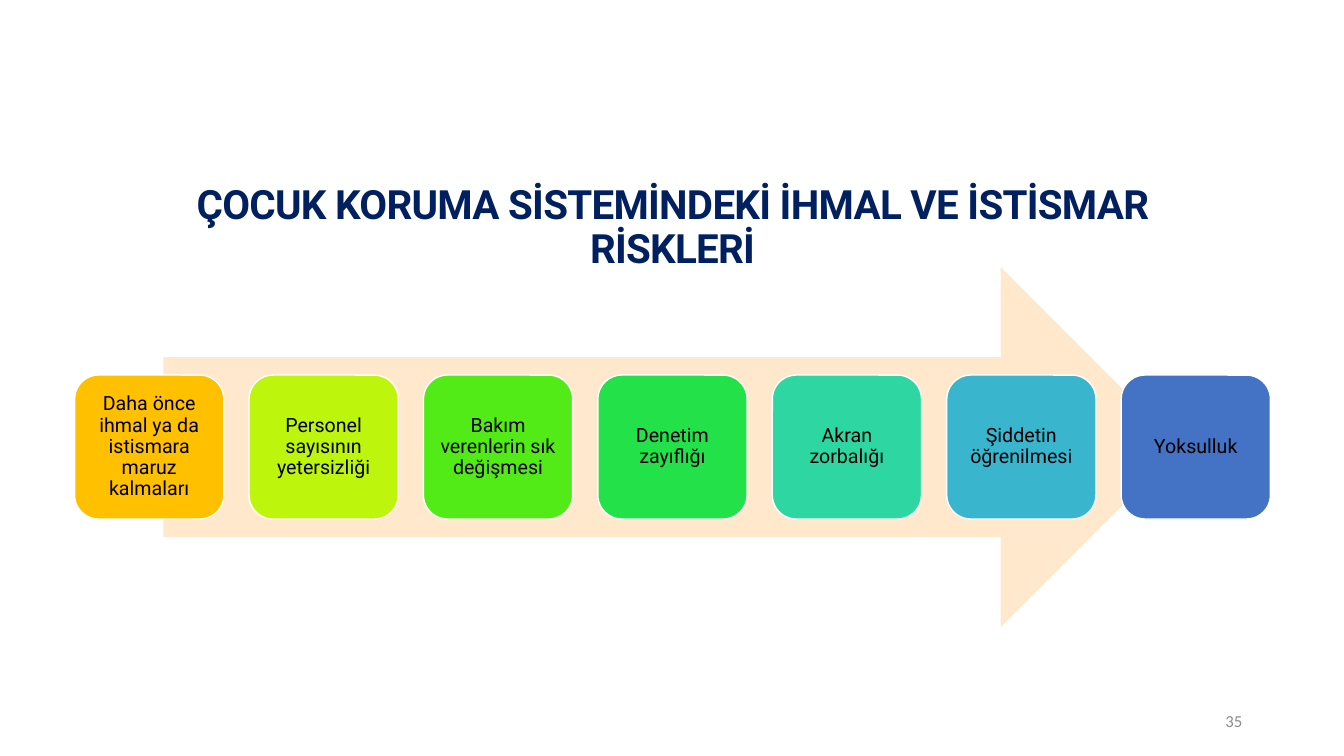
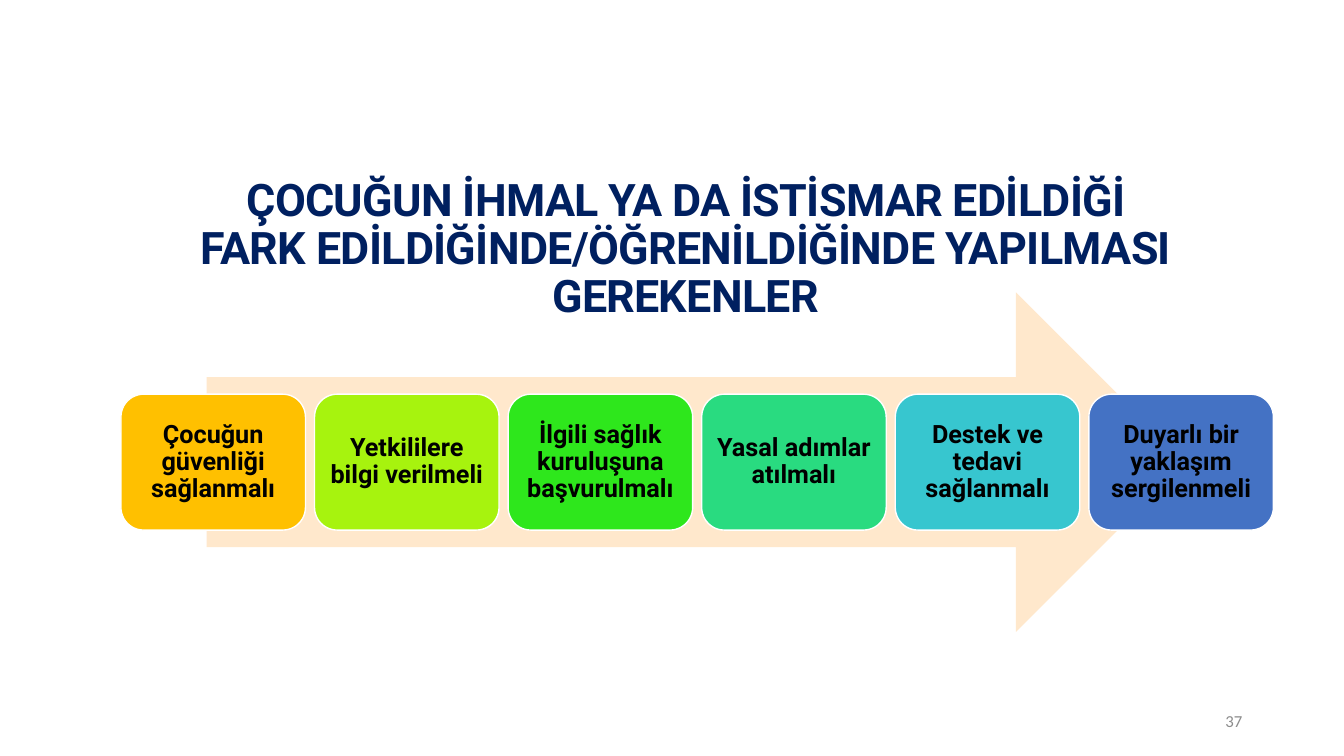
from pptx import Presentation
from pptx.dml.color import RGBColor
from pptx.enum.shapes import MSO_SHAPE
from pptx.enum.text import MSO_ANCHOR, MSO_AUTO_SIZE, PP_ALIGN
from pptx.util import Inches, Pt

NAVY, PEACH, GREY = "002060", "FFE8CC", "8C8C8C"
WHITE, BLACK = "FFFFFF", "000000"
FONT = "Roboto"

SLIDES = [
    dict(
        title="ÇOCUK KORUMA SİSTEMİNDEKİ İHMAL VE İSTİSMAR RİSKLERİ",
        box=(1.67, 1.75, 10, 1.46), size=28.8, base=0.48, page="35",
        arrow=(1.62, 2.65, 10.09, 3.57),
        left=0.74, width=1.48, step=1.73, inset=0.06,
        text=dict(size=Pt(14), bold=False),
        cards=[
            ("Daha önce ihmal ya da istismara maruz kalmaları", "FFC000"),
            ("Personel sayısının yetersizliği", "BEF50C"),
            ("Bakım verenlerin sık değişmesi", "53EB17"),
            ("Denetim zayıflığı", "23E148"),
            ("Akran zorbalığı", "2ED7A1"),
            ("Şiddetin öğrenilmesi", "39B6CE"),
            ("Yoksulluk", "4472C4"),
        ],
    ),
    dict(
        title="ÇOCUĞUN İHMAL YA DA İSTİSMAR EDİLDİĞİ FARK "
              "EDİLDİĞİNDE/ÖĞRENİLDİĞİNDE YAPILMASI GEREKENLER",
        box=(1.8, 1.48, 10, 2), size=32, base=0.05, page="37",
        arrow=(2.05, 2.9, 9.71, 3.37),
        left=1.2, width=1.83, step=1.92, inset=0.07,
        text=dict(size=Pt(18), bold=True),
        cards=[
            ("Çocuğun güvenliği sağlanmalı", "FFC000"),
            ("Yetkililere bilgi verilmeli", "A7F30E"),
            ("İlgili sağlık kuruluşuna başvurulmalı", "2EE71C"),
            ("Yasal adımlar atılmalı", "29DB80"),
            ("Destek ve tedavi sağlanmalı", "37C6CF"),
            ("Duyarlı bir yaklaşım sergilenmeli", "4472C4"),
        ],
    ),
]


def color(code):
    return RGBColor.from_string(code)


def assign(item, values):
    for name, value in values.items():
        setattr(item, name, value)


def write(shape, text, tint, font, margins, align=PP_ALIGN.CENTER, spacing=0.9):
    frame = shape.text_frame
    left, top, right, bottom = map(Inches, margins)
    assign(frame, dict(
        word_wrap=True, auto_size=MSO_AUTO_SIZE.NONE,
        vertical_anchor=MSO_ANCHOR.MIDDLE,
        margin_left=left, margin_top=top, margin_right=right, margin_bottom=bottom))
    line = frame.paragraphs[0]
    assign(line, dict(alignment=align, line_spacing=spacing))
    run = line.add_run()
    run.text = text
    assign(run.font, dict(name=FONT) | font)
    run.font.color.rgb = color(tint)
    return run


def draw(slide, kind, place, fill):
    shape = slide.shapes.add_shape(kind, *map(Inches, place))
    shape.shadow.inherit = False
    shape.fill.solid()
    shape.fill.fore_color.rgb = color(fill)
    shape.line.fill.background()
    return shape


def add_title(slide, data):
    title = slide.shapes.title
    assign(title, dict(zip(("left", "top", "width", "height"), map(Inches, data["box"]))))
    run = write(title, data["title"], NAVY, dict(size=Pt(data["size"]), bold=True),
                (0.1, 0.05, 0.1, data["base"]))
    run.font._element.set("spc", "-50")


def add_flow(slide, data):
    draw(slide, MSO_SHAPE.RIGHT_ARROW, data["arrow"], PEACH)
    top, height = data["arrow"][1], data["arrow"][3]
    for i, (text, fill) in enumerate(data["cards"]):
        place = (data["left"] + i * data["step"], top + 0.3 * height,
                 data["width"], 0.4 * height)
        card = draw(slide, MSO_SHAPE.ROUNDED_RECTANGLE, place, fill)
        card.line.color.rgb = color(WHITE)
        card.line.width = Pt(1)
        write(card, text, BLACK, data["text"], [data["inset"]] * 4)


def add_page(slide, page):
    box = slide.shapes.add_textbox(*map(Inches, (9.42, 6.95, 3, 0.4)))
    write(box, page, GREY, dict(name="Calibri", size=Pt(12)),
          (0.1, 0.05, 0.1, 0.05), PP_ALIGN.RIGHT, 1.0)


def main():
    deck = Presentation()
    deck.slide_width, deck.slide_height = Inches(13.33), Inches(7.5)
    for data in SLIDES:
        slide = deck.slides.add_slide(deck.slide_layouts[5])
        add_title(slide, data)
        add_flow(slide, data)
        add_page(slide, data["page"])
    deck.save("out.pptx")


if __name__ == "__main__":
    main()
